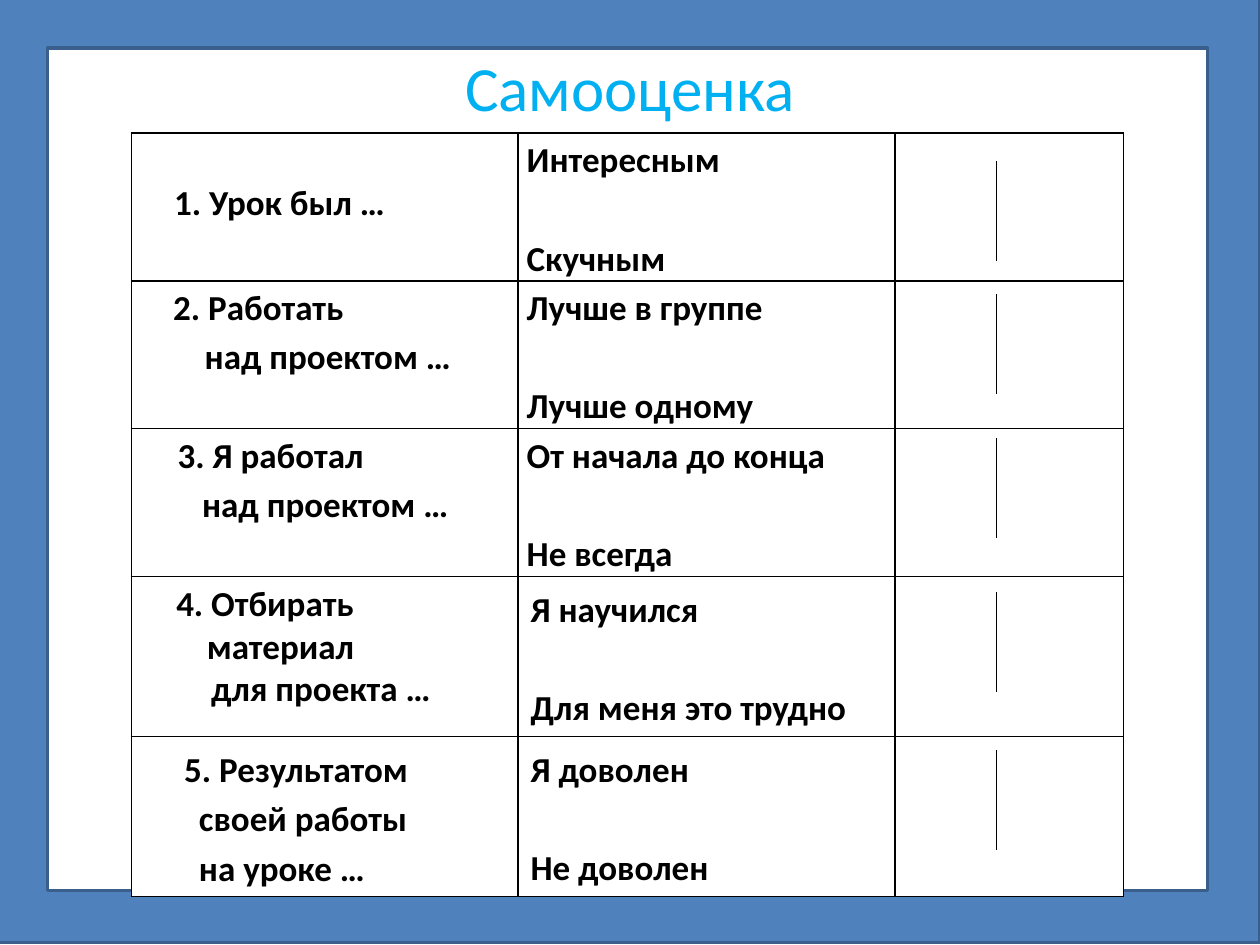
from dataclasses import dataclass

from lxml.etree import SubElement
from pptx import Presentation
from pptx.dml.color import RGBColor
from pptx.enum.shapes import MSO_CONNECTOR, MSO_SHAPE
from pptx.enum.text import MSO_ANCHOR, PP_ALIGN
from pptx.oxml import parse_xml
from pptx.oxml.ns import nsdecls, qn
from pptx.util import Pt


@dataclass(frozen=True)
class Theme:
    font: str = "Calibri"
    ink: RGBColor = RGBColor(0, 0, 0)
    paper: RGBColor = RGBColor(255, 255, 255)
    border: RGBColor = RGBColor(0x4F, 0x81, 0xBD)
    border_edge: RGBColor = RGBColor(0x3A, 0x5F, 0x8C)
    heading: RGBColor = RGBColor(0x00, 0xB0, 0xF0)
    heading_size: int = 36
    body_size: int = 20


theme = Theme()


def format_text(paragraph, size, color, bold):
    for run in paragraph.runs:
        run.font.name = theme.font
        run.font.size = Pt(size)
        run.font.color.rgb = color
        run.font.bold = bold


def outline_cell(cell):
    properties = cell._tc.get_or_add_tcPr()
    for position, side in enumerate(("lnL", "lnR", "lnT", "lnB")):
        properties.insert(position, parse_xml(
            f'<a:{side} {nsdecls("a")} w="{Pt(1)}"><a:solidFill>'
            f'<a:srgbClr val="{theme.ink}"/></a:solidFill></a:{side}>'))


presentation = Presentation()
presentation.slide_width, presentation.slide_height = Pt(720), Pt(540)
slide = presentation.slides.add_slide(presentation.slide_layouts[6])

frame = slide.shapes.add_group_shape()
for left, top, width, height, color in (
    (-3, -1.5, 723, 540, theme.border),
    (27, 27.5, 663, 481.5, theme.paper),
):
    panel = frame.shapes.add_shape(
        MSO_SHAPE.RECTANGLE, Pt(left), Pt(top), Pt(width), Pt(height))
    panel.shadow.inherit = False
    panel.fill.solid()
    panel.fill.fore_color.rgb = color
    panel.line.color.rgb = theme.border_edge
    panel.line.width = Pt(2)

heading = slide.shapes.add_textbox(Pt(36), Pt(22), Pt(648), Pt(55)).text_frame
heading.word_wrap = True
heading.vertical_anchor = MSO_ANCHOR.MIDDLE
heading.text = "Самооценка"
heading.paragraphs[0].alignment = PP_ALIGN.CENTER
format_text(heading.paragraphs[0], theme.heading_size, theme.heading, False)

questions = [
    ([("1. Урок был …", 19.5)], ("Интересным", "Скучным")),
    ([("2. Работать", 19), ("над проектом …", 37)],
     ("Лучше в группе", "Лучше одному")),
    ([("3. Я работал", 21.5), ("над проектом …", 35.5)],
     ("От начала до конца", "Не всегда")),
    ([("4. Отбирать", 18.5), ("материал", 36), ("для проекта …", 38.5)],
     ("Я научился", "Для меня это трудно")),
    ([("5. Результатом", 23), ("своей работы", 31.5), ("на уроке …", 31.5)],
     ("Я доволен", "Не доволен")),
]
column_widths = [221, 215.5, 130.5]
row_heights = [84.5, 84.5, 84.5, 91.5, 91.5]
mark_tops = [92, 168, 250.5, 338.5, 428.5]
answer_gap = 28

survey = slide.shapes.add_table(
    len(questions), len(column_widths), Pt(75), Pt(76),
    Pt(sum(column_widths)), Pt(sum(row_heights))).table
survey.first_row = False
survey.horz_banding = False
for column, width in zip(survey.columns, column_widths):
    column.width = Pt(width)

for index, (prompt, answers) in enumerate(questions):
    survey.rows[index].height = Pt(row_heights[index])
    compact = index < 3
    prompt_spacing = 1.0 if index == 3 else 1.15
    first, last = answers
    contents = [
        [(text, indent, 0, prompt_spacing) for text, indent in prompt],
        [(first, 0, 0, 1.15), (last, 0, answer_gap, 1.15)],
        [],
    ]
    for cell, lines in zip(survey.rows[index].cells, contents):
        cell.fill.solid()
        cell.fill.fore_color.rgb = theme.paper
        outline_cell(cell)
        if compact:
            cell.margin_left = cell.margin_right = Pt(5)
            cell.margin_top = cell.margin_bottom = Pt(0)
        cell.text_frame.text = "\n".join(line[0] for line in lines)
        for paragraph, (_, indent, gap, spacing) in zip(
                cell.text_frame.paragraphs, lines):
            paragraph.line_spacing = spacing
            paragraph.space_before = Pt(gap)
            paragraph._p.get_or_add_pPr().set("marL", str(Pt(indent)))
            format_text(paragraph, theme.body_size, theme.ink, True)

survey.cell(0, 0).margin_top = Pt(24.5)

for top in mark_tops:
    mark = slide.shapes.add_connector(
        MSO_CONNECTOR.STRAIGHT, Pt(569.5), Pt(top), Pt(569.5), Pt(top + 57))
    mark.line.color.rgb = theme.ink
    mark.line.width = Pt(0.75)
    SubElement(mark._element.spPr, qn("a:effectLst"))

presentation.save("out.pptx")
